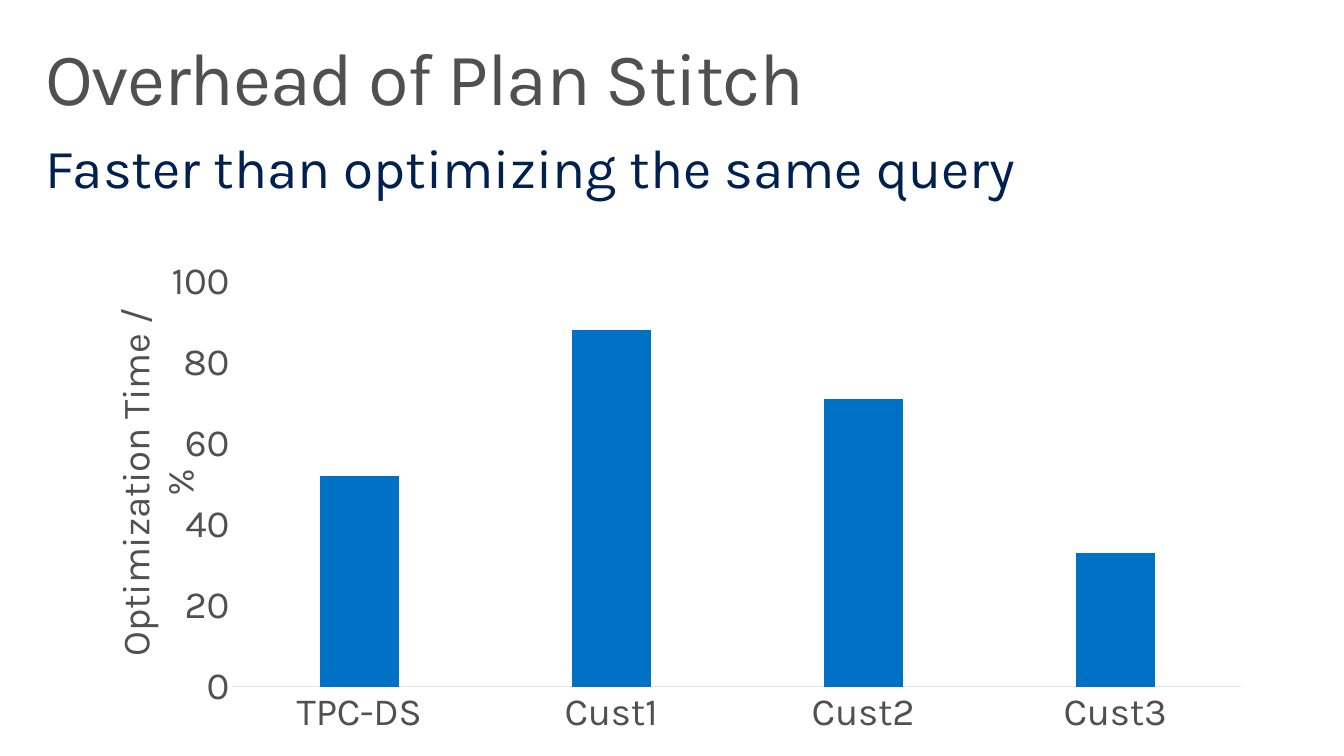
from dataclasses import dataclass

from lxml import etree
from pptx import Presentation
from pptx.chart.data import CategoryChartData
from pptx.dml.color import RGBColor
from pptx.enum.chart import XL_CHART_TYPE, XL_TICK_MARK
from pptx.enum.text import MSO_ANCHOR, MSO_AUTO_SIZE, PP_ALIGN
from pptx.oxml.ns import qn
from pptx.util import Inches, Pt

COLUMN = XL_CHART_TYPE.COLUMN_CLUSTERED
NO_TICK = XL_TICK_MARK.NONE
TOP = MSO_ANCHOR.TOP
LEFT = PP_ALIGN.LEFT
FIXED, GROW = MSO_AUTO_SIZE.NONE, MSO_AUTO_SIZE.SHAPE_TO_FIT_TEXT

FONT = "Karla"
COLORS = {"text": "505050", "lead": "002050", "bar": "0072C6", "line": "E5E5E5"}
COLS, ROWS = 136, 153
TIMES = {"TPC-DS": 52, "Cust1": 88, "Cust2": 71, "Cust3": 33}


@dataclass
class Box:
    """An area in columns and rows of the slide grid."""
    col: float
    row: float
    width: float
    height: float


@dataclass
class Head:
    """A heading held by a placeholder."""
    text: str
    box: Box
    size: int
    color: str
    fit: MSO_AUTO_SIZE
    space: int = 0


HEADS = [
    Head("Overhead of Plan Stitch", Box(3, 6.4, 130, 20), 54, "text", FIXED, -100),
    Head("Faster than optimizing the same query", Box(3, 26.6, 130, 16.2), 40,
         "lead", GROW),
]
CHART = Box(8, 50, 120, 100)


def rgb(name: str) -> RGBColor:
    return RGBColor.from_string(COLORS[name])


def place(deck, box: Box) -> tuple:
    wide, high = deck.slide_width / COLS, deck.slide_height / ROWS
    return (round(box.col * wide), round(box.row * high),
            round(box.width * wide), round(box.height * high))


def style(font, size: int, color: str) -> None:
    font.name, font.size, font.bold = FONT, Pt(size), False
    font.color.rgb = rgb(color)


def add_head(deck, shape, head: Head) -> None:
    shape.left, shape.top, shape.width, shape.height = place(deck, head.box)
    frame = shape.text_frame
    frame.text = head.text
    frame.word_wrap, frame.auto_size = True, head.fit
    frame.vertical_anchor = TOP
    frame.margin_left = frame.margin_right = Inches(0.16)
    frame.margin_top = frame.margin_bottom = Inches(0.1)
    para = frame.paragraphs[0]
    para.alignment, para.line_spacing, para.space_before = LEFT, 0.9, Pt(0)
    props = para._p.get_or_add_pPr()
    props.set("marL", "0")
    props.set("indent", "0")
    etree.SubElement(props, qn("a:buNone"))
    run = para.runs[0]
    style(run.font, head.size, head.color)
    if head.space:
        run.font._element.set("spc", str(head.space))


def set_layout(parent, after: str, shares: dict[str, float], inner: bool = False) -> None:
    """Fix a chart part at shares of the chart's size."""
    for old in parent.findall(qn("c:layout")):
        parent.remove(old)
    layout = etree.Element(qn("c:layout"))
    manual = etree.SubElement(layout, qn("c:manualLayout"))
    rules = {"layoutTarget": "inner"} if inner else {}
    rules |= {"xMode": "edge", "yMode": "edge"} | shares
    for tag, value in rules.items():
        etree.SubElement(manual, qn("c:" + tag)).set("val", str(value))
    mark = parent.find(qn(after)) if after else None
    parent.insert(0 if mark is None else parent.index(mark) + 1, layout)


def add_bars(deck, slide, box: Box) -> None:
    data = CategoryChartData(number_format="0")
    data.categories = list(TIMES)
    data.add_series("Series 1", list(TIMES.values()))
    chart = slide.shapes.add_chart(COLUMN, *place(deck, box), data).chart
    chart.has_legend = chart.has_title = False
    style(chart.font, 28, "text")

    # Bars
    plot = chart.plots[0]
    plot.gap_width, plot.overlap, plot.vary_by_categories = 219, -27, False
    fill = plot.series[0].format.fill
    fill.solid()
    fill.fore_color.rgb = rgb("bar")

    # Axes
    cats, vals = chart.category_axis, chart.value_axis
    for axis in (cats, vals):
        axis.major_tick_mark = axis.minor_tick_mark = NO_TICK
        axis.has_major_gridlines = False
        style(axis.tick_labels.font, 28, "text")
    cats.format.line.color.rgb = rgb("line")
    cats.format.line.width = Pt(0.75)
    vals.format.line.fill.background()
    vals.minimum_scale, vals.maximum_scale, vals.major_unit = 0, 100, 20

    # Axis title and plot area
    title = vals.axis_title
    title.text_frame.text = "Optimization Time / %"
    style(title.text_frame.paragraphs[0].runs[0].font, 28, "text")
    body = title.text_frame._txBody.bodyPr
    body.set("rot", "-5400000")
    body.set("vert", "horz")
    set_layout(title._element, "c:tx", {"x": 0.02, "y": 0.11})
    area = chart._chartSpace.chart.plotArea
    set_layout(area, "", {"x": 0.13, "y": 0.07, "w": 0.85, "h": 0.82}, True)


def main() -> None:
    deck = Presentation()
    deck.slide_width, deck.slide_height = Inches(13.6), Inches(7.65)
    slide = deck.slides.add_slide(deck.slide_layouts[1])
    for shape, head in zip(slide.placeholders, HEADS):
        add_head(deck, shape, head)
    add_bars(deck, slide, CHART)
    deck.save("out.pptx")


if __name__ == "__main__":
    main()
